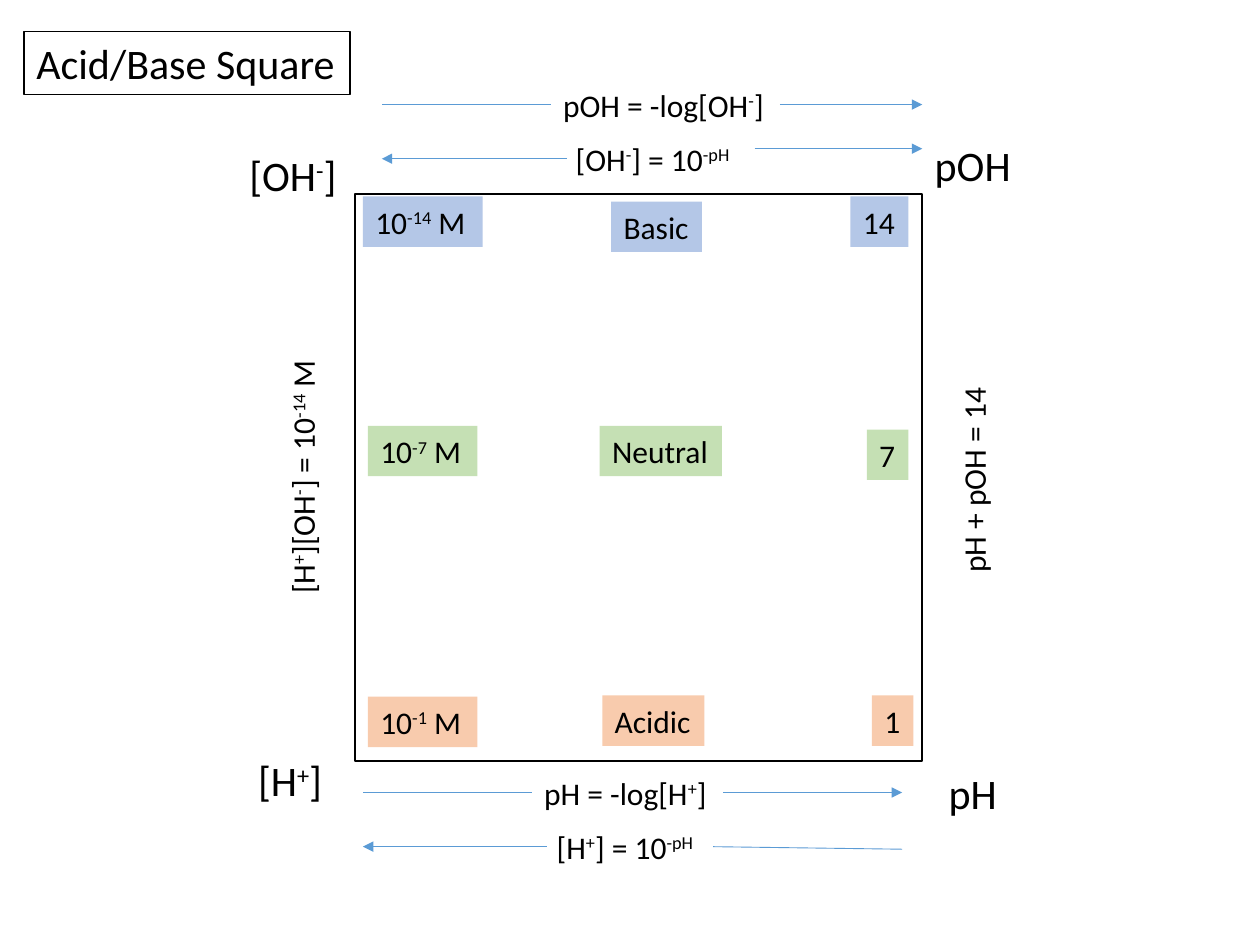
"""Build the acid/base square slide."""
from dataclasses import dataclass
from typing import Optional

from lxml import etree
from pptx import Presentation
from pptx.dml.color import RGBColor
from pptx.enum.shapes import MSO_CONNECTOR, MSO_SHAPE
from pptx.enum.text import MSO_AUTO_SIZE
from pptx.oxml.ns import qn
from pptx.util import Inches, Pt

STRAIGHT = MSO_CONNECTOR.STRAIGHT
RECTANGLE = MSO_SHAPE.RECTANGLE
FIT_SHAPE = MSO_AUTO_SIZE.SHAPE_TO_FIT_TEXT
LEFT_SIDE, RIGHT_SIDE = 1, 3
BLANK_LAYOUT = 6
BLACK, WHITE, ARROW_BLUE = "000000", "FFFFFF", "5B9BD5"
BASIC_BLUE, NEUTRAL_GREEN, ACIDIC_ORANGE = "B4C7E7", "C5E0B4", "F8CBAD"
LABEL_HEIGHT = {18: 0.4, 24: 0.5}


@dataclass(frozen=True)
class Label:
    """A text box; parts of the text between carets are superscript."""
    text: str
    left: float
    top: float
    width: float
    size: int = 18
    fill: Optional[str] = None
    line: Optional[str] = None
    rotation: int = 0
    wrap: bool = False


@dataclass(frozen=True)
class Arrow:
    """A thin line, optionally starting at the side of a named formula."""
    start: tuple[float, float]
    end: tuple[float, float]
    head: Optional[str] = None
    formula: Optional[str] = None
    side: int = LEFT_SIDE


CORNERS = [
    Label("pH", 7.43, 6.04, 0.59, 24),
    Label("pOH", 7.32, 1.06, 0.81, 24),
    Label("[H^+^]", 1.95, 5.94, 0.73, 24),
    Label("[OH^-^]", 1.88, 1.14, 0.91, 24),
]
FORMULAS = {
    "pH": Label("pH = -log[H^+^]", 4.22, 6.09, 1.52),
    "H": Label("[H^+^] = 10^-pH^", 4.32, 6.52, 1.34, wrap=True),
    "pOH": Label("pOH = -log[OH^-^]", 4.37, 0.63, 1.82),
    "OH": Label("[OH^-^] = 10^-pH^", 4.47, 1.06, 1.52, wrap=True),
}
SIDES = [
    Label("[H^+^][OH^-^] = 10^-14^ M", 1.31, 3.52, 2.18, rotation=270),
    Label("pH + pOH = 14", 6.88, 3.6, 1.69, rotation=270),
]
TILES = {
    BASIC_BLUE: [("10^-14^ M", 2.88, 1.56, 0.95), ("Basic", 4.85, 1.6, 0.72),
                 ("14", 6.75, 1.56, 0.46)],
    NEUTRAL_GREEN: [("10^-7^ M", 2.92, 3.38, 0.87), ("Neutral", 4.76, 3.38, 0.97),
                    ("7", 6.88, 3.41, 0.33)],
    ACIDIC_ORANGE: [("10^-1^ M", 2.92, 5.53, 0.87), ("Acidic", 4.78, 5.52, 0.81),
                    ("1", 6.92, 5.52, 0.33)],
}
TITLE = Label("Acid/Base Square", 0.19, 0.25, 2.59, 24, WHITE, BLACK)
ARROWS = [
    Arrow((5.66, 6.72), (7.16, 6.74), None, "H", RIGHT_SIDE),
    Arrow((4.22, 6.29), (2.88, 6.29), None, "pH", LEFT_SIDE),
    Arrow((5.74, 6.29), (7.16, 6.29), "tailEnd", "pH", RIGHT_SIDE),
    Arrow((2.88, 6.72), (4.34, 6.72), "headEnd"),
    Arrow((5.99, 1.18), (7.32, 1.18), "tailEnd"),
    Arrow((4.37, 0.83), (3.03, 0.83), None, "pOH", LEFT_SIDE),
    Arrow((6.19, 0.83), (7.32, 0.83), "tailEnd", "pOH", RIGHT_SIDE),
    Arrow((3.03, 1.26), (4.5, 1.26), "headEnd"),
]


def color(value: str) -> RGBColor:
    """Turn a hex string into a colour."""
    return RGBColor.from_string(value)


def apply_format(target, values: dict) -> None:
    """Set each named attribute on the target."""
    for name, value in values.items():
        setattr(target, name, value)


def set_line(line, value: str, width: float) -> None:
    """Give a line a solid colour and a width in points."""
    line.color.rgb = color(value)
    line.width = Pt(width)


def write_text(paragraph, text: str, size: int) -> None:
    """Write text as runs, raising every part between carets."""
    for index, part in enumerate(text.split("^")):
        if not part:
            continue
        run = paragraph.add_run()
        run.text = part
        apply_format(run.font, {"name": "Calibri", "size": Pt(size)})
        run.font.color.rgb = color(BLACK)
        if index % 2:
            run.font._element.set("baseline", "30000")


def add_label(slide, label: Label):
    """Draw a label and return its shape."""
    shape = slide.shapes.add_textbox(Inches(label.left), Inches(label.top),
                                     Inches(label.width), Inches(LABEL_HEIGHT[label.size]))
    shape.rotation = label.rotation
    apply_format(shape.text_frame, {"word_wrap": label.wrap, "auto_size": FIT_SHAPE})
    write_text(shape.text_frame.paragraphs[0], label.text, label.size)
    if label.fill:
        shape.fill.solid()
        shape.fill.fore_color.rgb = color(label.fill)
    if label.line:
        set_line(shape.line, label.line, 1)
    return shape


def add_arrow(slide, arrow: Arrow, formulas: dict) -> None:
    """Draw an arrow and join it to its formula if it has one."""
    connector = slide.shapes.add_connector(
        STRAIGHT, *(Inches(value) for value in arrow.start + arrow.end))
    set_line(connector.line, ARROW_BLUE, 0.5)
    if arrow.formula:
        connector.begin_connect(formulas[arrow.formula], arrow.side)
    if arrow.head:
        etree.SubElement(connector.line._get_or_add_ln(), qn(f"a:{arrow.head}"),
                         type="triangle")
    etree.SubElement(connector._element.spPr, qn("a:effectLst"))


def add_square(slide) -> None:
    """Draw the outlined square."""
    square = slide.shapes.add_shape(RECTANGLE, Inches(2.82), Inches(1.54),
                                    Inches(4.5), Inches(4.5))
    square.shadow.inherit = False
    square.fill.background()
    set_line(square.line, BLACK, 1)


def main() -> None:
    """Build and save the presentation."""
    presentation = Presentation()
    apply_format(presentation, {"slide_width": Inches(10), "slide_height": Inches(7.5)})
    slide = presentation.slides.add_slide(presentation.slide_layouts[BLANK_LAYOUT])
    add_square(slide)
    formulas = {name: add_label(slide, label) for name, label in FORMULAS.items()}
    for arrow in ARROWS:
        add_arrow(slide, arrow, formulas)
    tiles = [Label(*tile, fill=fill) for fill, row in TILES.items() for tile in row]
    for label in CORNERS + SIDES + tiles + [TITLE]:
        add_label(slide, label)
    presentation.save("out.pptx")


if __name__ == "__main__":
    main()
